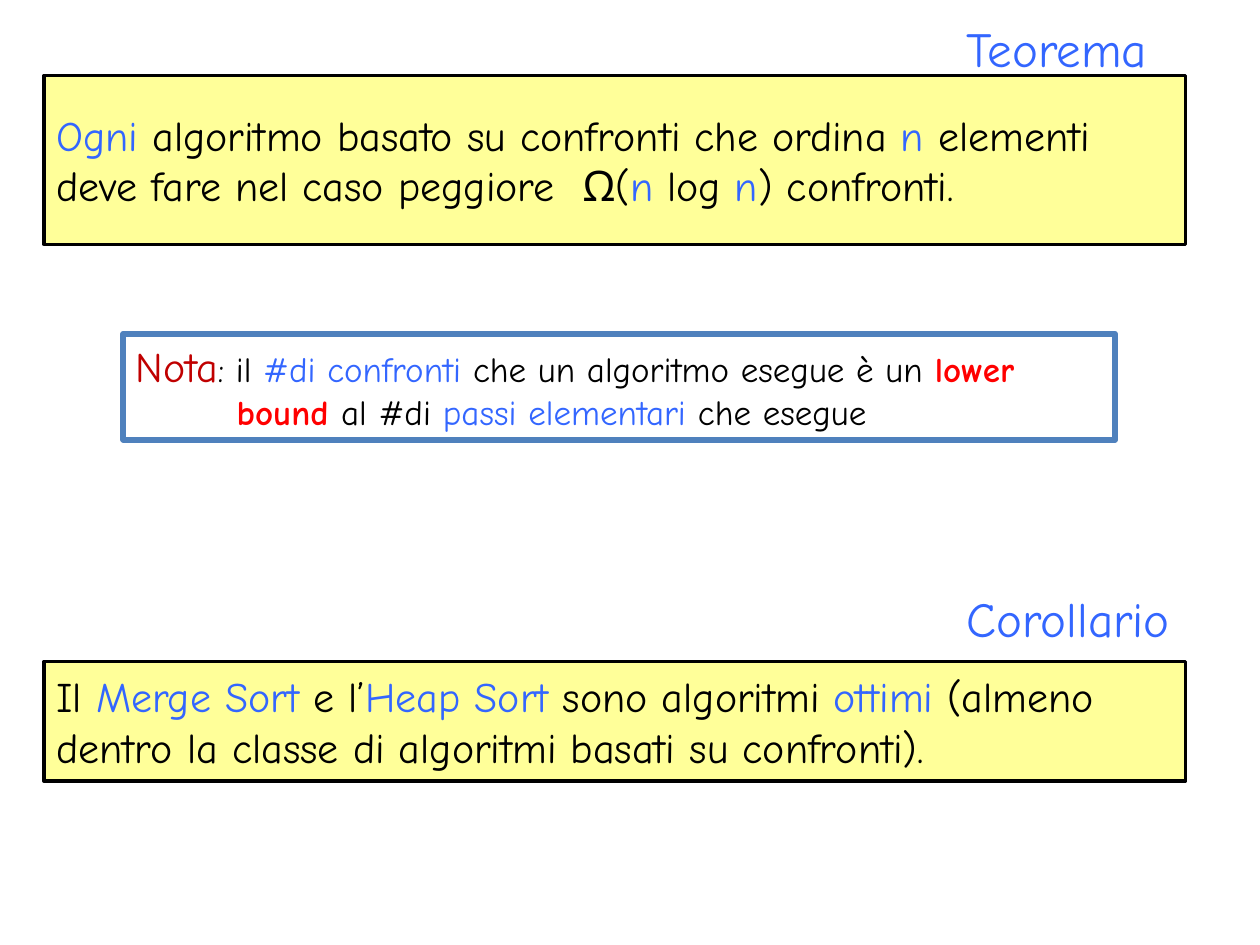
import pptx
import pptx.dml.color
import pptx.enum.shapes
import pptx.enum.text
import pptx.util

Inches = pptx.util.Inches
Pt = pptx.util.Pt
ANCHOR = pptx.enum.text.MSO_ANCHOR
FIT = pptx.enum.text.MSO_AUTO_SIZE.SHAPE_TO_FIT_TEXT

FONT = "Comic Neue"
COLORS = {
    "text": "000000",
    "accent": "3366FF",
    "note": "C00000",
    "strong": "FF0000",
    "statement": "FFFF99",
    "paper": "FFFFFF",
    "frame": "4F81BD",
}


def rgb(name):
    return pptx.dml.color.RGBColor.from_string(COLORS[name])


def add_run(paragraph, text, color="text", size=24, bold=False):
    run = paragraph.add_run()
    run.text = text
    run.font.name = FONT
    run.font.size = Pt(size)
    run.font.bold = bold
    run.font.color.rgb = rgb(color)


def add_box(slide, left, top, width, height, fill, line, line_width, anchor):
    """Add a framed rectangle and return its text frame."""
    box = slide.shapes.add_shape(
        pptx.enum.shapes.MSO_SHAPE.RECTANGLE,
        Inches(left), Inches(top), Inches(width), Inches(height))
    box.shadow.inherit = False
    box.fill.solid()
    box.fill.fore_color.rgb = rgb(fill)
    box.line.color.rgb = rgb(line)
    box.line.width = Pt(line_width)
    frame = box.text_frame
    frame.word_wrap = True
    frame.vertical_anchor = anchor
    frame.paragraphs[0].alignment = pptx.enum.text.PP_ALIGN.LEFT
    return frame


def add_statement(slide, left, top, width, height, parts):
    """Add a yellow box whose parts are (text, color) pairs."""
    frame = add_box(slide, left, top, width, height,
                    "statement", "text", 2, ANCHOR.MIDDLE)
    for text, color in parts:
        add_run(frame.paragraphs[0], text, color)


def add_heading(slide, left, top, width, height, text):
    heading = slide.shapes.add_textbox(
        Inches(left), Inches(top), Inches(width), Inches(height))
    heading.text_frame.word_wrap = False
    heading.text_frame.auto_size = FIT
    add_run(heading.text_frame.paragraphs[0], text, "accent", size=28)


def add_note(slide, left, top, width, height):
    frame = add_box(slide, left, top, width, height,
                    "paper", "frame", 3.5, ANCHOR.TOP)
    frame.auto_size = FIT
    first = frame.paragraphs[0]
    add_run(first, "Nota", "note")
    add_run(first, ": il ", size=20)
    add_run(first, "#di confronti ", "accent", size=20)
    add_run(first, "che un algoritmo esegue è un ", size=20)
    add_run(first, "lower", "strong", size=20, bold=True)

    second = frame.add_paragraph()
    second.alignment = pptx.enum.text.PP_ALIGN.LEFT
    properties = second._p.get_or_add_pPr()
    properties.set("marL", str(Inches(0.8)))
    properties.set("indent", "0")
    add_run(second, "bound ", "strong", size=20, bold=True)
    add_run(second, "al #di ", size=20)
    add_run(second, "passi elementari ", "accent", size=20)
    add_run(second, "che esegue", size=20)


def main():
    deck = pptx.Presentation()
    deck.slide_width, deck.slide_height = Inches(10), Inches(7.5)
    slide = deck.slides.add_slide(deck.slide_layouts[6])

    add_statement(slide, 0.35, 5.25, 9.06, 0.95, [
        ("Il ", "text"),
        ("Merge Sort", "accent"),
        (" e l’", "text"),
        ("Heap Sort ", "accent"),
        ("sono algoritmi ", "text"),
        ("ottimi", "accent"),
        (" (almeno dentro la classe di algoritmi basati su confronti).",
         "text"),
    ])
    add_heading(slide, 7.57, 4.62, 1.96, 0.57, "Corollario")

    add_statement(slide, 0.35, 0.6, 9.06, 1.34, [
        ("Ogni ", "accent"),
        ("algoritmo basato su confronti che ordina ", "text"),
        ("n ", "accent"),
        ("elementi deve fare nel caso peggiore  Ω(", "text"),
        ("n ", "accent"),
        ("log", "text"),
        (" n", "accent"),
        (") confronti.", "text"),
    ])
    add_heading(slide, 7.57, 0.1, 1.8, 0.57, "Teorema")

    add_note(slide, 0.98, 2.65, 7.87, 0.84)
    deck.save("out.pptx")


if __name__ == "__main__":
    main()
